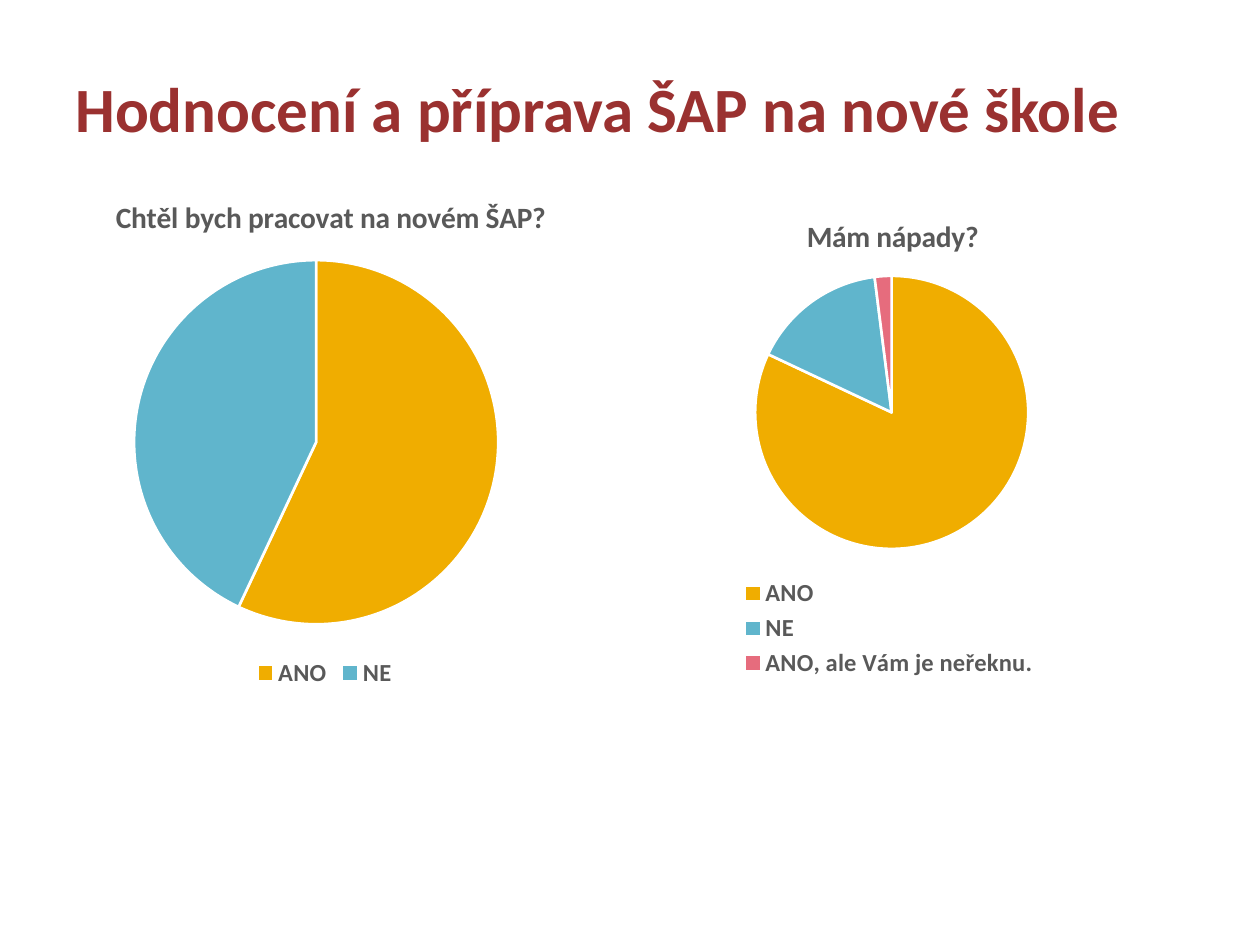
import pptx
import pptx.chart.data
import pptx.dml.color
import pptx.enum.chart
import pptx.enum.text
import pptx.oxml
import pptx.oxml.ns
import pptx.util
from pptx.util import Cm


def color(hex_value):
    return pptx.dml.color.RGBColor.from_string(hex_value)


class SlideBuilder:
    FONT = "Calibri"
    HEADING = "9A3130"
    GREY = "595959"
    SLICES = ("F0AD00", "60B5CC", "E66C7D")

    def __init__(self, slide):
        self.slide = slide

    def style(self, font, size, hex_value):
        formats = {"name": self.FONT, "size": pptx.util.Pt(size), "bold": True}
        for attribute, value in formats.items():
            setattr(font, attribute, value)
        font.color.rgb = color(hex_value)

    def title(self, text, box):
        heading = self.slide.shapes.title
        heading.left, heading.top, heading.width, heading.height = map(Cm, box)
        frame = heading.text_frame
        frame.text = text
        formats = {
            "word_wrap": True,
            "auto_size": pptx.enum.text.MSO_AUTO_SIZE.NONE,
            "vertical_anchor": pptx.enum.text.MSO_ANCHOR.MIDDLE,
            "margin_left": Cm(0.25),
            "margin_right": Cm(0.13),
            "margin_top": Cm(0.13),
            "margin_bottom": Cm(0.13),
        }
        for attribute, value in formats.items():
            setattr(frame, attribute, value)
        frame.paragraphs[0].alignment = pptx.enum.text.PP_ALIGN.LEFT
        self.style(frame.paragraphs[0].runs[0].font, 36, self.HEADING)

    def place(self, parent, index, target, **fractions):
        """Place a chart part by fractions of the chart's size."""
        for old in parent.findall(pptx.oxml.ns.qn("c:layout")):
            parent.remove(old)
        inner = '<c:layoutTarget val="inner"/>' if target else ""
        modes = "".join(f'<c:{axis}Mode val="edge"/>' for axis in "xy")
        values = "".join(f'<c:{key} val="{value}"/>' for key, value in fractions.items())
        parent.insert(index, pptx.oxml.parse_xml(
            f'<c:layout {pptx.oxml.ns.nsdecls("c")}><c:manualLayout>'
            f"{inner}{modes}{values}</c:manualLayout></c:layout>"))

    def pie(self, question, answers, box, plot, heading, legend=None):
        data = pptx.chart.data.CategoryChartData()
        data.categories = list(answers)
        data.add_series(question, list(answers.values()))
        chart = self.slide.shapes.add_chart(
            pptx.enum.chart.XL_CHART_TYPE.PIE, *map(Cm, box), data).chart
        self.style(chart.font, 14, "000000")

        # Question above the pie
        chart.has_title = True
        frame = chart.chart_title.text_frame
        frame.text = question
        self.style(frame.paragraphs[0].runs[0].font, 16.8, self.GREY)
        self.place(chart.chart_title._element, 1, False, **heading)

        # Legend below the pie
        chart.has_legend = True
        chart.legend.position = pptx.enum.chart.XL_LEGEND_POSITION.BOTTOM
        chart.legend.include_in_layout = False
        self.style(chart.legend.font, 14, self.GREY)
        if legend:
            self.place(chart.legend._element, 1, False, **legend)

        # Slices
        chart.plots[0].vary_by_categories = True
        for index, hex_value in enumerate(self.SLICES[:len(answers)]):
            piece = chart.plots[0].series[0].points[index].format
            piece.fill.solid()
            piece.fill.fore_color.rgb = color(hex_value)
            piece.line.color.rgb = color("FFFFFF")
            piece.line.width = pptx.util.Pt(1.5)
        plot_area = chart._chartSpace.chart.plotArea
        self.place(plot_area, 0, True, **plot)


def main():
    deck = pptx.Presentation()
    deck.slide_width, deck.slide_height = Cm(25.4), Cm(19.05)
    builder = SlideBuilder(deck.slides.add_slide(deck.slide_layouts[5]))

    builder.title("Hodnocení a příprava ŠAP na nové škole", (1.27, 0.43, 22.86, 3.48))

    # Ideas
    builder.pie(
        "Mám nápady?",
        {"ANO": 82, "NE": 16, "ANO, ale Vám je neřeknu.": 2},
        box=(12.73, 3.76, 10.39, 10.01),
        plot={"x": 0.24, "y": 0.18, "w": 0.53, "h": 0.55},
        heading={"x": 0.33, "y": 0.05},
        legend={"x": 0.21, "y": 0.78, "w": 0.58, "h": 0.22})

    # Willingness to work on the new plan
    builder.pie(
        "Chtěl bych pracovat na novém ŠAP?",
        {"ANO": 57, "NE": 43},
        box=(0.71, 3.33, 11.68, 10.64),
        plot={"x": 0.17, "y": 0.18, "w": 0.63, "h": 0.69},
        heading={"x": 0.13, "y": 0.05})

    deck.save("out.pptx")


if __name__ == "__main__":
    main()
